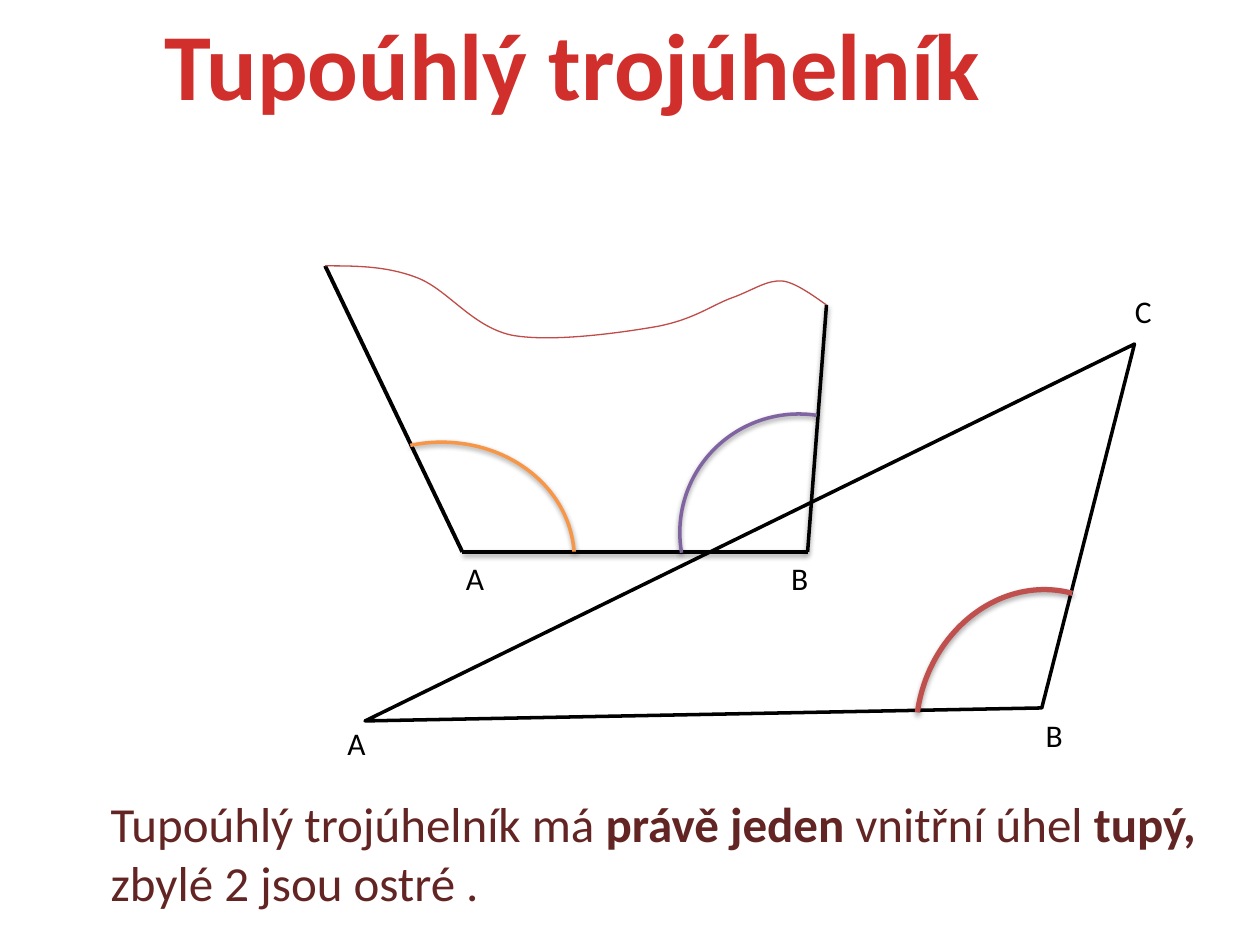
from lxml.etree import SubElement
from pptx import Presentation
from pptx.dml.color import RGBColor
from pptx.enum.shapes import MSO_CONNECTOR, MSO_SHAPE
from pptx.enum.text import MSO_AUTO_SIZE, PP_ALIGN
from pptx.oxml import parse_xml
from pptx.oxml.ns import nsdecls, qn
from pptx.util import Pt

COLORS = {
    "black": "000000", "text": "632523", "wave": "BF4C48",
    "orange": "F79646", "purple": "8064A2", "red": "C0504D",
}
GLOW = {0: "FC7C7A", 75: "D02F2C", 100: "C70500"}
FONT = {"name": "Calibri", "size": Pt(18), "bold": False}


def color(name):
    return RGBColor.from_string(COLORS[name])


def format_font(font, **values):
    for key, value in {**FONT, **values}.items():
        setattr(font, key, value)


def add_text(slide, box, runs, size=18, wrap=False, align=None):
    """Add a text box of (text, bold) runs and return its paragraph."""
    frame = slide.shapes.add_textbox(*map(Pt, box)).text_frame
    frame.word_wrap = wrap
    frame.auto_size = MSO_AUTO_SIZE.SHAPE_TO_FIT_TEXT
    para = frame.paragraphs[0]
    para.alignment = align
    for text, bold in runs:
        run = para.add_run()
        run.text = text
        format_font(run.font, size=Pt(size), bold=bold)
        run.font.color.rgb = color("text" if wrap else "black")
    return para


def add_glow(font_xml):
    """Swap the solid text fill for a vertical gradient."""
    stops = "".join(
        f'<a:gs pos="{pos * 1000}"><a:srgbClr val="{tone}"/></a:gs>'
        for pos, tone in GLOW.items())
    fill = parse_xml(
        f'<a:gradFill {nsdecls("a")}><a:gsLst>{stops}</a:gsLst>'
        '<a:lin ang="5400000" scaled="0"/></a:gradFill>')
    font_xml.replace(font_xml.find(qn("a:solidFill")), fill)


def add_shade(shape, alpha=None, dist=1.6):
    """Give a soft shadow below, or none when alpha is left out."""
    props = shape._element.spPr
    for old in props.findall(qn("a:effectLst")):
        props.remove(old)
    effect = SubElement(props, qn("a:effectLst"))
    if alpha:
        effect.append(parse_xml(
            f'<a:outerShdw {nsdecls("a")} blurRad="{Pt(3.1)}" '
            f'dist="{Pt(dist)}" dir="5400000" rotWithShape="0">'
            f'<a:srgbClr val="{COLORS["black"]}">'
            f'<a:alpha val="{alpha * 1000}"/></a:srgbClr></a:outerShdw>'))


def style_line(shape, tone, width):
    shape.line.color.rgb = color(tone)
    shape.line.width = Pt(width)


def add_side(slide, start, end, width=2, alpha=None):
    side = slide.shapes.add_connector(
        MSO_CONNECTOR.STRAIGHT, *map(Pt, start + end))
    style_line(side, "black", width)
    add_shade(side, alpha)


def add_shape(slide, kind, box, turn, marks, tone, width):
    shape = slide.shapes.add_shape(kind, *map(Pt, box))
    shape.rotation = turn
    for i, mark in enumerate(marks):
        shape.adjustments[i] = mark
    shape.fill.background()
    style_line(shape, tone, width)
    shape.shadow.inherit = False
    return shape


def add_wave(slide, points):
    """Draw a smooth line: a start, then three points to each curve."""
    spots = [(Pt(x), Pt(y)) for x, y in points]
    pen = slide.shapes.build_freeform(*spots[0])
    pen.add_line_segments(spots[1:], close=False)
    wave = pen.convert_to_shape()
    wave.fill.background()
    style_line(wave, "wave", 0.75)
    wave.shadow.inherit = False
    lines = list(wave._element.iter(qn("a:lnTo")))
    for i in range(0, len(lines), 3):
        curve = SubElement(lines[i].getparent(), qn("a:cubicBezTo"))
        for line in lines[i:i + 3]:
            curve.append(line[0])
            line.getparent().remove(line)


def main():
    deck = Presentation()
    deck.slide_width, deck.slide_height = Pt(720), Pt(540)
    slide = deck.slides.add_slide(deck.slide_layouts[6])

    # Title and rule
    title = add_text(slide, (84.24, 0, 486, 72.72),
                     [("Tupoúhlý trojúhelník", True)], 54,
                     align=PP_ALIGN.CENTER)
    add_glow(title.runs[0].font._element)
    add_text(slide, (56.16, 450, 641.52, 74.88), [
        ("Tupoúhlý trojúhelník má ", False), ("právě jeden", True),
        (" vnitřní úhel ", False), ("tupý, ", True),
        ("zbylé 2 jsou ostré .", False)], 28, wrap=True)

    # Obtuse triangle
    tri = add_shape(slide, MSO_SHAPE.ISOSCELES_TRIANGLE,
                    (219.6, 295.92, 489.6, 163.44), 153.9, [0.716],
                    "black", 2)
    tri._element.spPr.find(qn("a:xfrm")).set("flipH", "1")

    # Open figure with two obtuse angles
    left, a, b, right = ((185.8, 151.9), (264.2, 315.4),
                         (461.5, 315.4), (472.3, 174.2))
    add_side(slide, left, a, 2.25)
    add_side(slide, a, b, alpha=38)
    add_side(slide, b, right, alpha=38)
    add_wave(slide, [
        left, (203, 151.9), (220.3, 151.9), (237.6, 158.4),
        (255.6, 164.9), (269.3, 186.5), (292.3, 191.5),
        (315.4, 195.8), (355, 190.1), (375.8, 186.5),
        (397.4, 182.2), (406.8, 174.2), (419, 169.9),
        (430.6, 165.6), (438.5, 159.8), (447.1, 160.6),
        (455.8, 161.3), (471.6, 174.2), right])

    # Corner names
    for name, x, y in [("A", 191.5, 410.4), ("B", 590.4, 405.4),
                       ("C", 641.5, 163.4), ("A", 259.2, 316.1),
                       ("B", 445, 316.1)]:
        add_text(slide, (x, y, 25, 29), [(name, False)])

    # Angle arcs
    for box, turn, end, tone, width, alpha, dist in [
            ((173.5, 252.7, 154.8, 136.1), 355.9, 0, "orange", 2, 38, 1.6),
            ((388.8, 236.2, 135.4, 136.1), 270, 5.229, "purple", 2, 38, 1.6),
            ((514.8, 345.6, 154.8, 136.1), 285.4, 0, "red", 3, 35, 1.8)]:
        arc = add_shape(slide, MSO_SHAPE.ARC, box, turn, [156.125, end],
                        tone, width)
        add_shade(arc, alpha, dist)

    deck.save("out.pptx")


if __name__ == "__main__":
    main()
